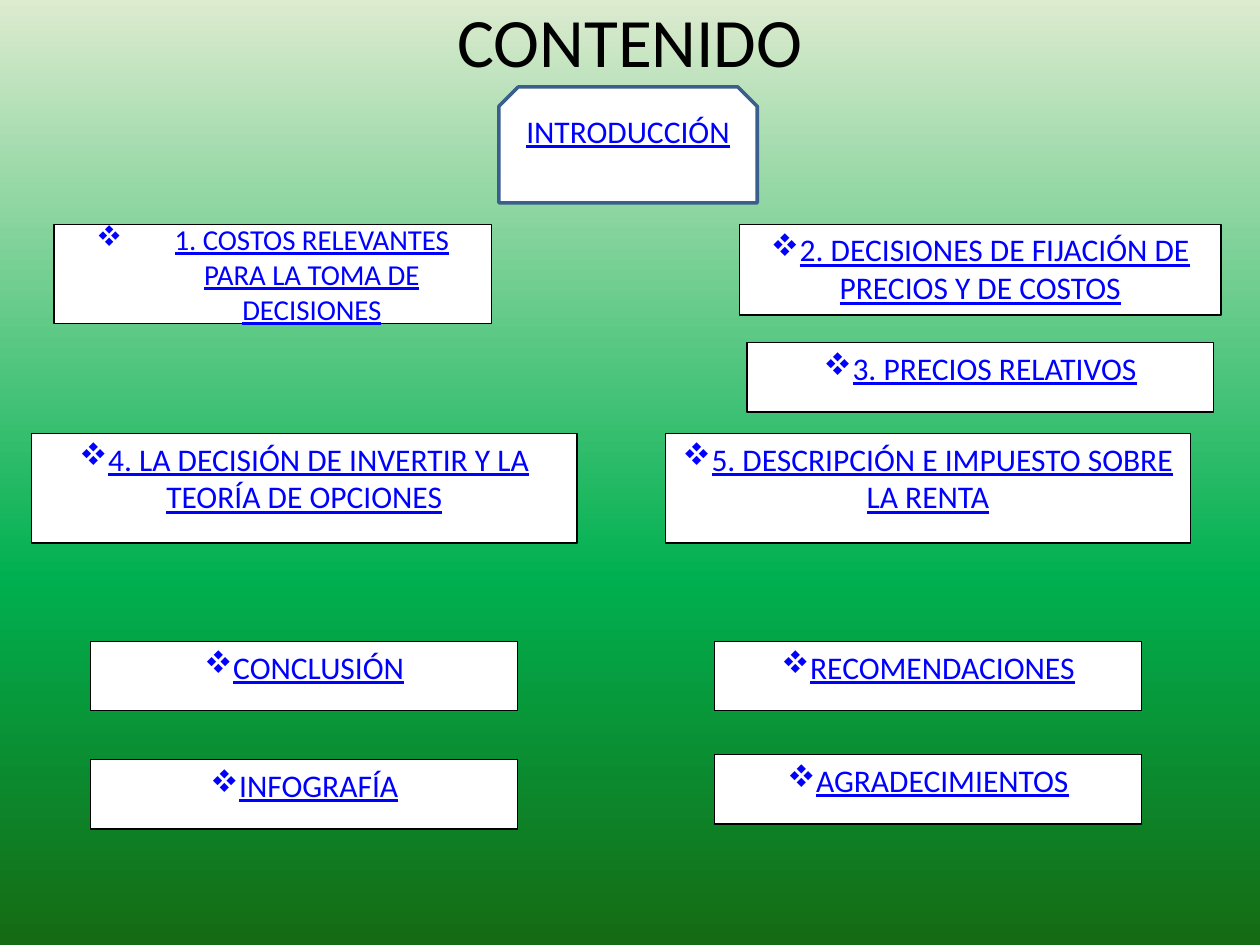
from copy import deepcopy
from dataclasses import dataclass

from pptx import Presentation
from pptx import util as u
from pptx.dml.color import RGBColor
from pptx.enum import shapes, text
from pptx.oxml.ns import qn

BLACK = RGBColor(0x00, 0x00, 0x00)
WHITE = RGBColor(0xFF, 0xFF, 0xFF)
LINK_BLUE = RGBColor(0x00, 0x00, 0xFF)
STEEL = RGBColor(0x3A, 0x5F, 0x8C)
GRADIENT = (
    (0, RGBColor(0xDD, 0xEB, 0xCF)),
    (0.61, RGBColor(0x00, 0xB0, 0x50)),
    (1, RGBColor(0x15, 0x6B, 0x13)),
)
FONT = "Calibri"
WIDTH, HEIGHT = u.Inches(10), u.Inches(7.5)
LEFT, RIGHT = 7.2, 56.7
SMALL_W, SMALL_H = 33.9, 7.33


@dataclass
class Box:
    label: str
    x: float
    y: float
    w: float
    h: float
    size: float = 18
    bullet: bool = True
    hanging: float = 0
    before: float = 3.6
    anchor: text.MSO_ANCHOR = text.MSO_ANCHOR.TOP
    bottom_inset: float = 0.05
    kind: shapes.MSO_SHAPE = shapes.MSO_SHAPE.RECTANGLE
    line: RGBColor = BLACK
    line_width: float = 0.75


BOXES = [
    Box("2. DECISIONES DE FIJACIÓN DE PRECIOS Y DE COSTOS", 58.7, 23.73, 38.2, 9.6),
    Box("3. PRECIOS RELATIVOS", 59.3, 36.27, 37, SMALL_H),
    Box("4. LA DECISIÓN DE INVERTIR Y LA TEORÍA DE OPCIONES", 2.5, 45.87, 43.3, 11.6),
    Box("5. DESCRIPCIÓN E IMPUESTO SOBRE LA RENTA", 52.8, 45.87, 41.7, 11.6),
    Box("CONCLUSIÓN", LEFT, 67.87, SMALL_W, SMALL_H),
    Box("RECOMENDACIONES", RIGHT, 67.87, SMALL_W, SMALL_H),
    Box("INFOGRAFÍA", LEFT, 80.4, SMALL_W, SMALL_H),
    Box("AGRADECIMIENTOS", RIGHT, 79.87, SMALL_W, SMALL_H),
    Box("INTRODUCCIÓN", 39.6, 9.2, 20.5, 12.27, bullet=False, before=0,
        anchor=text.MSO_ANCHOR.MIDDLE, bottom_inset=0.35,
        kind=shapes.MSO_SHAPE.SNIP_2_SAME_RECTANGLE, line=STEEL, line_width=2),
    Box("1. COSTOS RELEVANTES PARA LA TOMA DE DECISIONES", 4.3, 23.73, 34.7, 10.53,
        size=16.5, hanging=0.62, before=0, anchor=text.MSO_ANCHOR.MIDDLE),
]


def paint_background(s) -> None:
    fill = s.background.fill
    fill.gradient()
    fill.gradient_angle = 270
    stops = next(s.background._cSld.iter(qn("a:gsLst")))
    stops.append(deepcopy(stops[-1]))
    for stop, (position, color) in zip(fill.gradient_stops, GRADIENT):
        stop.position = position
        stop.color.rgb = color


def add_bullet(p, hanging: float) -> None:
    pPr = p._p.get_or_add_pPr()
    pPr.set("marL", str(u.Inches(hanging)))
    pPr.set("indent", str(-u.Inches(hanging)))
    font = pPr.makeelement(qn("a:buFont"), {"typeface": "Wingdings"})
    char = pPr.makeelement(qn("a:buChar"), {"char": "v"})
    pPr.extend([font, char])


def format_text(p, size: float, color: RGBColor, underline: bool) -> None:
    p.alignment = text.PP_ALIGN.CENTER
    for r in p.runs:
        r.font.name = FONT
        r.font.size = u.Pt(size)
        r.font.color.rgb = color
        r.font.underline = underline


def add_title(s) -> None:
    sp = s.shapes.title
    sp.left, sp.top, sp.width, sp.height = 0, 0, WIDTH, u.Inches(0.63)
    tf = sp.text_frame
    tf.text = "CONTENIDO"
    tf.vertical_anchor = text.MSO_ANCHOR.MIDDLE
    format_text(tf.paragraphs[0], 39.6, BLACK, False)


def add_box(s, box: Box) -> None:
    sp = s.shapes.add_shape(
        box.kind,
        round(WIDTH * box.x / 100), round(HEIGHT * box.y / 100),
        round(WIDTH * box.w / 100), round(HEIGHT * box.h / 100),
    )
    sp.shadow.inherit = False
    sp.fill.solid()
    sp.fill.fore_color.rgb = WHITE
    sp.line.color.rgb = box.line
    sp.line.width = u.Pt(box.line_width)
    tf = sp.text_frame
    tf.word_wrap = True
    tf.vertical_anchor = box.anchor
    tf.margin_bottom = u.Inches(box.bottom_inset)
    tf.text = box.label
    p = tf.paragraphs[0]
    p.space_before = u.Pt(box.before)
    format_text(p, box.size, LINK_BLUE, True)
    if box.bullet:
        add_bullet(p, box.hanging)


def main() -> None:
    prs = Presentation()
    prs.slide_width, prs.slide_height = WIDTH, HEIGHT
    s = prs.slides.add_slide(prs.slide_layouts[0])
    subtitle = s.placeholders[1].element
    subtitle.getparent().remove(subtitle)
    paint_background(s)
    add_title(s)
    for box in BOXES:
        add_box(s, box)
    prs.save("out.pptx")


if __name__ == "__main__":
    main()
